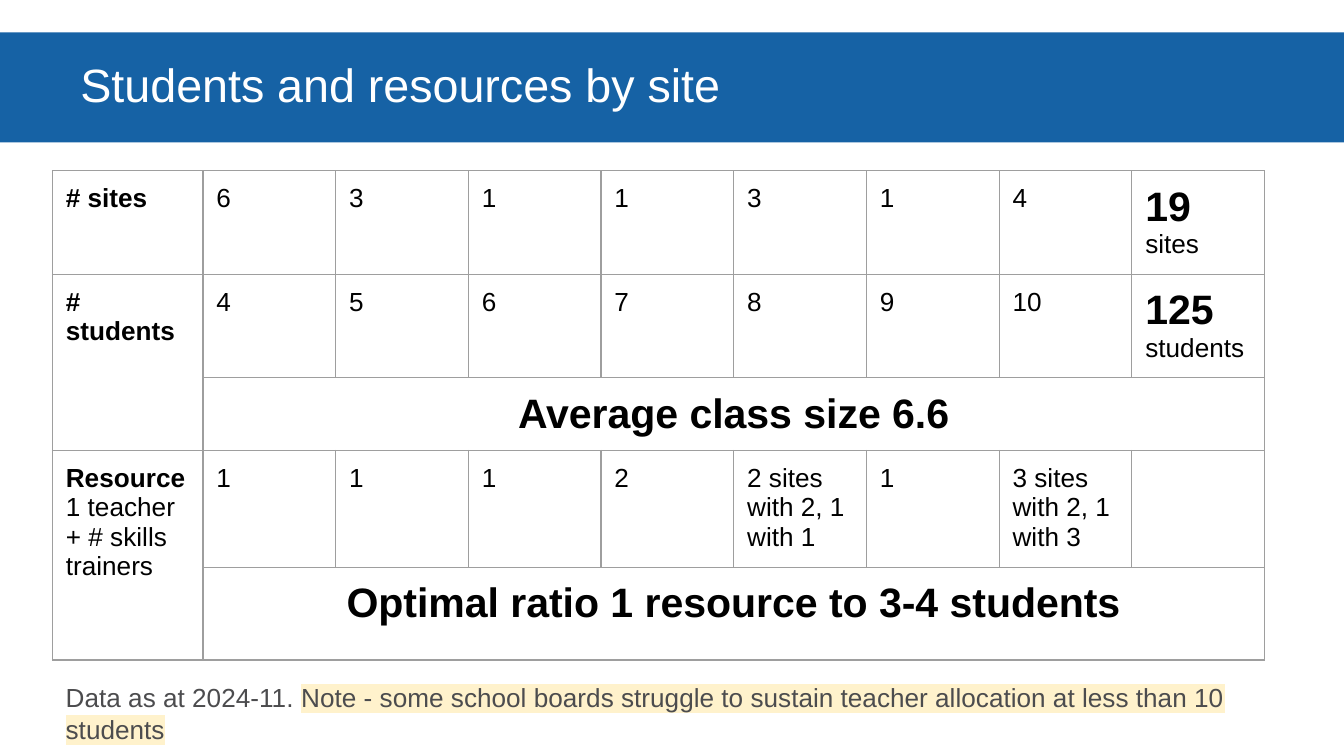
from typing import NamedTuple

from lxml.etree import SubElement
from pptx import Presentation
from pptx.dml.color import RGBColor
from pptx.enum.shapes import MSO_SHAPE as Shape
from pptx.enum.text import MSO_ANCHOR as Anchor, PP_ALIGN as Align
from pptx.oxml import parse_xml
from pptx.oxml.ns import nsdecls, qn
from pptx.util import Inches, Pt

BLUE = RGBColor(0x16, 0x62, 0xA5)
WHITE = RGBColor(0xFF, 0xFF, 0xFF)
BLACK = RGBColor(0, 0, 0)
DARK_GREY = RGBColor(0x4C, 0x4C, 0x4E)
BORDER_GREY = RGBColor(0x9E, 0x9E, 0x9E)
CREAM = RGBColor(0xFF, 0xF2, 0xCC)
FONT = "Arial"
BODY, LARGE = 14, 22
PAD = Inches(0.1)


class Run(NamedTuple):
    text: str
    size: int = BODY
    bold: bool = False
    color: RGBColor = BLACK
    highlight: RGBColor | None = None


class Entry(NamedTuple):
    row: int
    col: int
    paragraphs: list[list[Run]]
    rows: int = 1
    cols: int = 1


LEFT, CONTENT_WIDTH, LABEL_WIDTH = 0.39, 9.02, 1.12
ROW_HEIGHTS = [0.77, 0.77, 0.54, 0.87, 0.69]
COL_WIDTHS = [LABEL_WIDTH] + [(CONTENT_WIDTH - LABEL_WIDTH) / 8] * 8

NUMBERS = {
    0: ["6", "3", "1", "1", "3", "1", "4"],
    1: ["4", "5", "6", "7", "8", "9", "10"],
    3: ["1", "1", "1", "2", "2 sites with 2, 1  with 1", "1", "3 sites with 2, 1 with 3"],
}
ENTRIES = [
    Entry(0, 0, [[Run("# sites", bold=True)]]),
    Entry(0, 8, [[Run("19", LARGE, True), Run(" sites")]]),
    Entry(1, 0, [[Run("# students", bold=True)]], rows=2),
    Entry(1, 8, [[Run("125 ", LARGE, True), Run("students")]]),
    Entry(2, 1, [[Run("Average class size 6.6", LARGE, True)]], cols=8),
    Entry(3, 0, [[Run("Resource", bold=True)], [Run("1 teacher + # skills trainers")]], rows=2),
    Entry(4, 1, [[Run("Optimal ratio 1 resource to 3-4 students", LARGE, True)]], cols=8),
] + [
    Entry(row, col, [[Run(text)]])
    for row, texts in NUMBERS.items()
    for col, text in enumerate(texts, 1)
]


def write(tf, paragraphs: list[list[Run]], align: Align = Align.LEFT) -> None:
    for i, runs in enumerate(paragraphs):
        p = tf.add_paragraph() if i else tf.paragraphs[0]
        p.alignment = align
        for run in runs:
            r = p.add_run()
            r.text = run.text
            r.font.size = Pt(run.size)
            r.font.bold = run.bold
            r.font.name = FONT
            r.font.color.rgb = run.color
            if run.highlight is not None:
                mark = parse_xml(
                    f'<a:highlight {nsdecls("a")}><a:srgbClr val="{run.highlight}"/></a:highlight>')
                r.font._element.find(qn("a:solidFill")).addnext(mark)


def style_cell(cell) -> None:
    """Set padding, thin grey borders and no fill."""
    cell.margin_left = cell.margin_right = cell.margin_top = cell.margin_bottom = PAD
    tc_pr = cell._tc.get_or_add_tcPr()
    for side in ("lnL", "lnR", "lnT", "lnB"):
        ln = SubElement(tc_pr, qn(f"a:{side}"), w=str(Pt(0.75)))
        fill = SubElement(ln, qn("a:solidFill"))
        SubElement(fill, qn("a:srgbClr"), val=str(BORDER_GREY))
    cell.fill.background()


def add_box(s, left: float, top: float, width: float, height: float, color: RGBColor):
    """Add a borderless filled rectangle and return its text frame."""
    sp = s.shapes.add_shape(
        Shape.RECTANGLE, Inches(left), Inches(top), Inches(width), Inches(height))
    sp.shadow.inherit = False
    sp.fill.solid()
    sp.fill.fore_color.rgb = color
    sp.line.fill.background()
    tf = sp.text_frame
    tf.word_wrap = True
    tf.vertical_anchor = Anchor.MIDDLE
    return tf


def add_site_table(s) -> None:
    table = s.shapes.add_table(
        len(ROW_HEIGHTS), len(COL_WIDTHS), Inches(LEFT), Inches(1.27),
        Inches(CONTENT_WIDTH), Inches(sum(ROW_HEIGHTS))).table
    table.first_row = table.horz_banding = False
    for row, height in zip(table.rows, ROW_HEIGHTS):
        row.height = Inches(height)
    for column, width in zip(table.columns, COL_WIDTHS):
        column.width = Inches(width)
    for cell in table.iter_cells():
        style_cell(cell)
    for e in ENTRIES:
        cell = table.cell(e.row, e.col)
        if e.rows > 1 or e.cols > 1:
            cell.merge(table.cell(e.row + e.rows - 1, e.col + e.cols - 1))
        write(cell.text_frame, e.paragraphs, Align.CENTER if e.cols > 1 else Align.LEFT)


def main() -> None:
    prs = Presentation()
    prs.slide_width = Inches(10)
    prs.slide_height = Inches(10) * 9 // 16
    s = prs.slides.add_slide(prs.slide_layouts[6])

    add_site_table(s)

    title = add_box(s, 0, 0.24, 10, 0.82, BLUE)
    write(title, [[Run("Students and resources by site", 25, color=WHITE)]])
    p = title.paragraphs[0]
    p.line_spacing = 0.9
    p._p.get_or_add_pPr().set("marL", str(Inches(0.5)))

    note = add_box(s, LEFT, 5.02, CONTENT_WIDTH, 0.57, WHITE)
    note.margin_top = note.margin_bottom = PAD
    write(note, [[
        Run("Data as at 2024-11. ", color=DARK_GREY),
        Run("Note - some school boards struggle to sustain teacher allocation "
            "at less than 10 students", color=DARK_GREY, highlight=CREAM),
    ]])

    prs.save("out.pptx")


if __name__ == "__main__":
    main()
